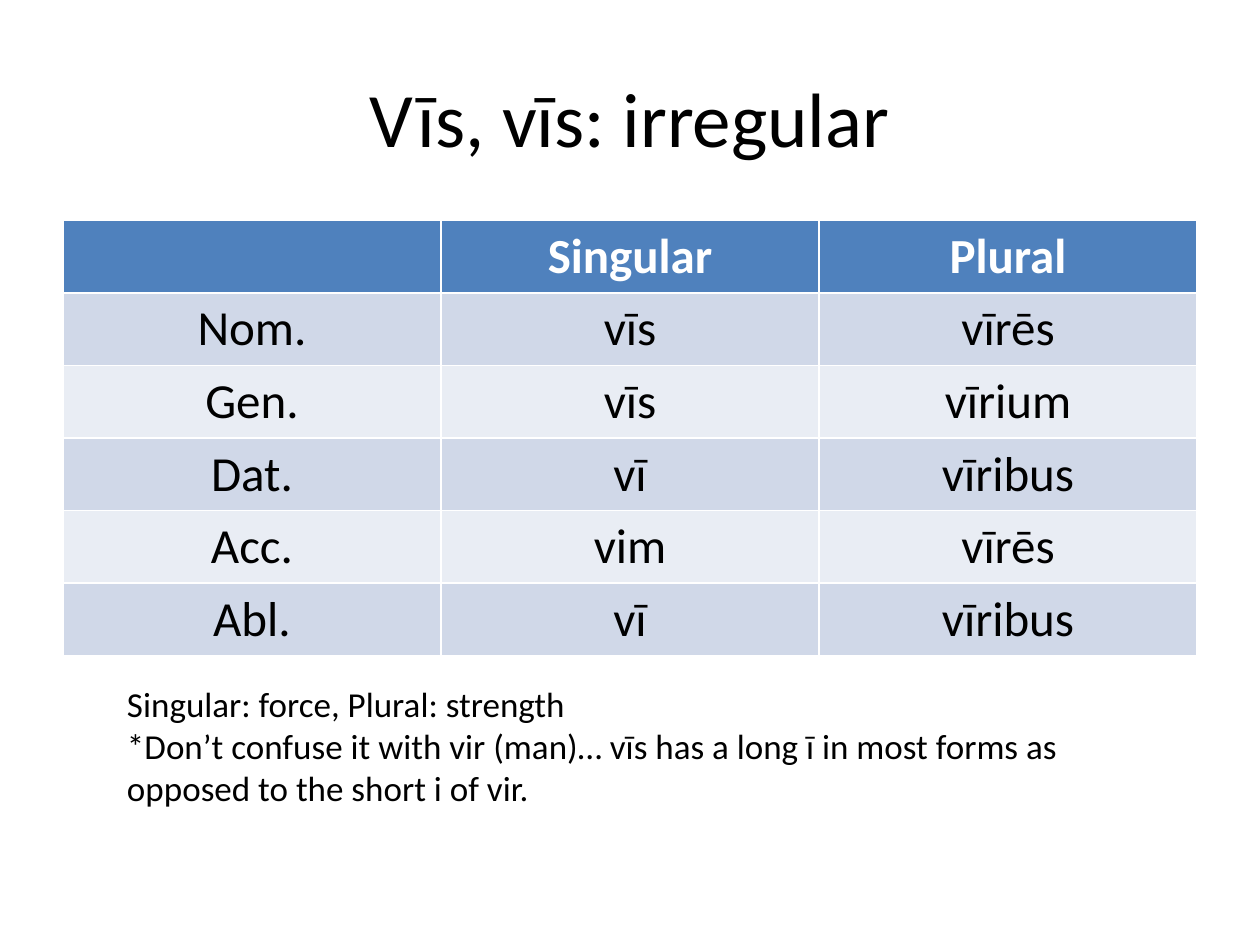
from dataclasses import dataclass

from pptx import Presentation
from pptx.dml.color import RGBColor
from pptx.enum import text
from pptx.util import Pt


@dataclass(frozen=True)
class Theme:
    font: str = "Calibri"
    ink: str = "000000"
    light: str = "FFFFFF"
    head: str = "4F81BD"
    bands: tuple = ("D0D8E8", "E9EDF4")
    title: int = 44
    cell: int = 28
    note: int = 20


THEME = Theme()
FORMS = [
    ("", "Singular", "Plural"),
    ("Nom.", "vīs", "vīrēs"),
    ("Gen.", "vīs", "vīrium"),
    ("Dat.", "vī", "vīribus"),
    ("Acc.", "vim", "vīrēs"),
    ("Abl.", "vī", "vīribus"),
]
NOTES = [
    "Singular: force, Plural: strength",
    "*Don’t confuse it with vir (man)… vīs has a long ī in most forms "
    "as opposed to the short i of vir.",
]


def style(para, size, color, align, bold=False):
    para.alignment = align
    font = para.font
    font.name, font.size, font.bold = THEME.font, Pt(size), bold
    font.color.rgb = RGBColor.from_string(color)


def add_title(slide, box, words):
    title = slide.shapes.title
    title.left, title.top, title.width, title.height = map(Pt, box)
    frame = title.text_frame
    frame.text = words
    frame.vertical_anchor = text.MSO_ANCHOR.MIDDLE
    style(frame.paragraphs[0], THEME.title, THEME.ink, text.PP_ALIGN.CENTER)


def add_forms(slide, box, rows):
    table = slide.shapes.add_table(len(rows), len(rows[0]), *map(Pt, box)).table
    for i, row in enumerate(rows):
        head = i == 0
        fill = THEME.head if head else THEME.bands[(i - 1) % 2]
        ink = THEME.light if head else THEME.ink
        for j, word in enumerate(row):
            cell = table.cell(i, j)
            cell.text = word
            cell.fill.solid()
            cell.fill.fore_color.rgb = RGBColor.from_string(fill)
            para = cell.text_frame.paragraphs[0]
            style(para, THEME.cell, ink, text.PP_ALIGN.CENTER, head)


def add_notes(slide, box, lines):
    frame = slide.shapes.add_textbox(*map(Pt, box)).text_frame
    frame.word_wrap = True
    frame.auto_size = text.MSO_AUTO_SIZE.SHAPE_TO_FIT_TEXT
    frame.text = "\n".join(lines)
    for para in frame.paragraphs:
        style(para, THEME.note, THEME.ink, text.PP_ALIGN.LEFT)


def main():
    deck = Presentation()
    deck.slide_width, deck.slide_height = Pt(720), Pt(540)
    slide = deck.slides.add_slide(deck.slide_layouts[5])
    add_title(slide, (36, 21.6, 648, 90), "Vīs, vīs: irregular")
    add_forms(slide, (36, 126, 648, 244.8), FORMS)
    add_notes(slide, (65.5, 386.6, 592.5, 80), NOTES)
    deck.save("out.pptx")


if __name__ == "__main__":
    main()
